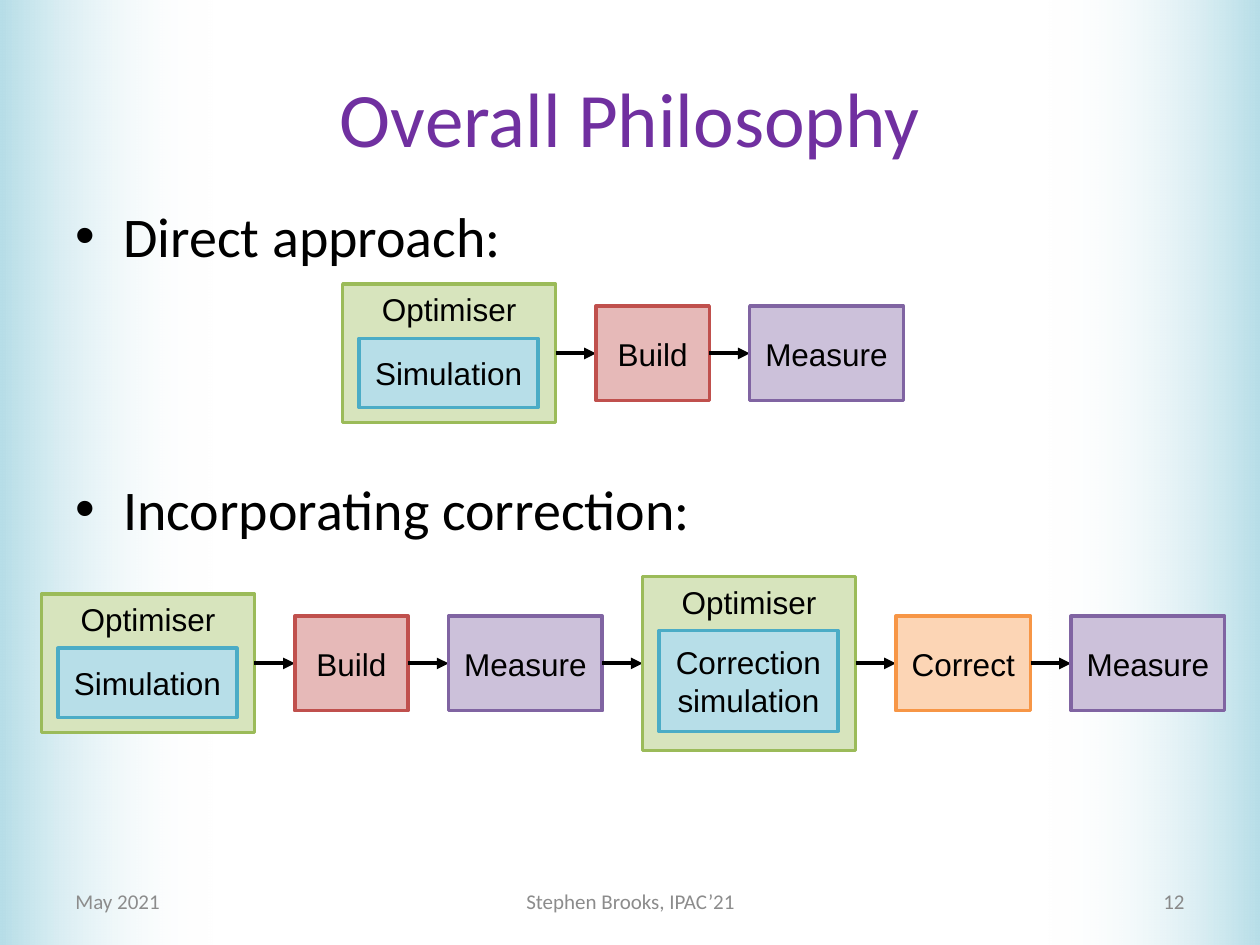
from lxml import etree
from pptx import Presentation
from pptx.dml.color import RGBColor
from pptx.enum.shapes import MSO_CONNECTOR, MSO_SHAPE
from pptx.enum.text import MSO_ANCHOR, PP_ALIGN
from pptx.oxml.ns import qn
from pptx.util import Inches, Pt

RECTANGLE = MSO_SHAPE.RECTANGLE
STRAIGHT = MSO_CONNECTOR.STRAIGHT
TOP, MIDDLE = MSO_ANCHOR.TOP, MSO_ANCHOR.MIDDLE
LEFT, CENTER, RIGHT = PP_ALIGN.LEFT, PP_ALIGN.CENTER, PP_ALIGN.RIGHT
COLUMNS, ROWS = 100, 75

deck = Presentation()
deck.slide_width, deck.slide_height = Inches(10), Inches(7.5)
cell = deck.slide_width // COLUMNS  # square grid cell, a tenth of an inch
slide = deck.slides.add_slide(deck.slide_layouts[6])
color = RGBColor.from_string


def write(box, *lines, font="Calibri", size=12, ink="000000", align=LEFT,
          anchor=MIDDLE, bullet=None, gap=0):
    """Fill a box with one paragraph per line; gap is the space between them."""
    frame = box.text_frame
    frame.word_wrap = True
    frame.vertical_anchor = anchor
    for index, line in enumerate(lines):
        para = frame.paragraphs[0] if index == 0 else frame.add_paragraph()
        para.alignment = align
        if index:
            para.space_before = Pt(gap)
        if bullet:
            properties = para._p.get_or_add_pPr()
            indent = Inches(0.38)
            properties.set("marL", str(indent))
            properties.set("indent", str(-indent))
            etree.SubElement(properties, qn("a:buFont"), typeface="Arial")
            etree.SubElement(properties, qn("a:buChar"), char=bullet)
        span = para.add_run()
        span.text = line
        span.font.name = font
        span.font.size = Pt(size)
        span.font.color.rgb = color(ink)


def add_box(parent, left, top, width, height, fill, line, text, anchor=MIDDLE):
    """Add a labelled rectangle, placed in grid cells, to a slide or group."""
    box = parent.shapes.add_shape(
        RECTANGLE, *(round(n * cell) for n in (left, top, width, height)))
    box.shadow.inherit = False
    box.fill.solid()
    box.fill.fore_color.rgb = color(fill)
    box.line.color.rgb = color(line)
    box.line.width = Pt(2)
    write(box, text, font="Arial", size=18, align=CENTER, anchor=anchor)


# Side bands fading towards the middle
band_width = 16.9
for left, rotation in ((COLUMNS - band_width, 180), (0, 0)):
    band = slide.shapes.add_shape(RECTANGLE, round(left * cell), 0,
                                  round(band_width * cell), ROWS * cell)
    band.shadow.inherit = False
    band.rotation = rotation
    band.line.fill.background()
    band.fill.gradient()
    band.fill.gradient_angle = 0
    for stop, shade in zip(band.fill.gradient_stops, ("B7DEE8", "FFFFFF")):
        stop.color.rgb = color(shade)
    clear_color = band._element.spPr.findall(".//" + qn("a:srgbClr"))[-1]
    etree.SubElement(clear_color, qn("a:alpha"), val="0")

# Title, bullets and footer
texts = [
    ((5, 3, 90, 12.5), ["Overall Philosophy"],
     dict(size=44, ink="7030A0", align=CENTER)),
    ((5, 15.5, 90, 51.5), ["Direct approach:", "Incorporating correction:"],
     dict(size=32, anchor=TOP, bullet="•", gap=117.5)),
    ((5, 69.5, 23.3, 4), ["May 2021"], dict(ink="8C8C8C")),
    ((34.2, 69.5, 31.7, 4), ["Stephen Brooks, IPAC’21"],
     dict(ink="8C8C8C", align=CENTER)),
    ((71.7, 69.5, 23.3, 4), ["12"], dict(ink="898989", align=RIGHT)),
]
for area, lines, style in texts:
    box = slide.shapes.add_textbox(*(round(n * cell) for n in area))
    write(box, *lines, **style)

# Flows: each stage is a plain box or an optimiser around a simulation
stage_styles = {  # width, fill, line
    "Build": (9, "E6B9B8", "C0504D"),
    "Measure": (12.2, "CCC1DA", "8064A2"),
    "Correct": (10.7, "FCD5B5", "F79646"),
}
optimiser_heights = {  # outer, inner
    "Simulation": (11, 5.5),
    "Correction simulation": (13.8, 8),
}
optimiser_width, stage_height, stage_gap = 16.9, 7.5, 3.2
flows = [
    (27.2, 28.05, ["Simulation", "Build", "Measure"]),
    (3.3, 52.65, ["Simulation", "Build", "Measure",
                  "Correction simulation", "Correct", "Measure"]),
]
for left, middle, stages in flows:
    for index, stage in enumerate(stages):
        if index:
            arrow = slide.shapes.add_connector(
                STRAIGHT, round((left - stage_gap) * cell), round(middle * cell),
                round(left * cell), round(middle * cell))
            arrow.line.color.rgb = color("000000")
            arrow.line.width = Pt(2.25)
            etree.SubElement(arrow.line._get_or_add_ln(), qn("a:tailEnd"),
                             type="triangle")
            etree.SubElement(arrow._element.spPr, qn("a:effectLst"))
        if stage in optimiser_heights:
            width = optimiser_width
            outer, inner = optimiser_heights[stage]
            top = middle - outer / 2
            group = slide.shapes.add_group_shape()
            add_box(group, left, top, width, outer, "D7E4BD", "9BBB59",
                    "Optimiser", anchor=TOP)
            add_box(group, left + 1.3, top + 4.3, 14.2, inner,
                    "B7DEE8", "4BACC6", stage)
        else:
            width, fill, line = stage_styles[stage]
            add_box(slide, left, middle - stage_height / 2, width, stage_height,
                    fill, line, stage)
        left += width + stage_gap

deck.save("out.pptx")
